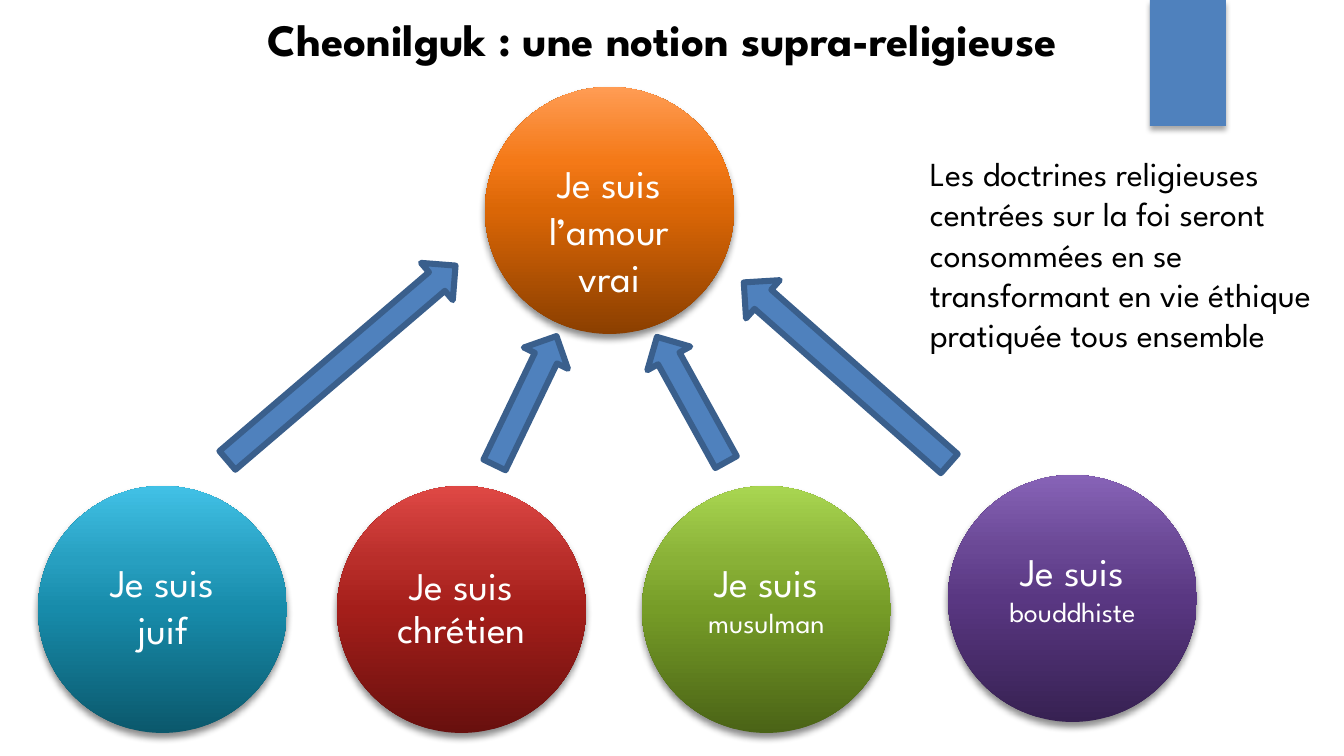
"""Builds a slide on Cheonilguk: four faith circles pointing to a circle of true love."""
import lxml.etree
import pptx
import pptx.dml.color
import pptx.enum.shapes
import pptx.enum.text
import pptx.oxml.ns
import pptx.util

PX = 914400 / 100.8
SHAPES = pptx.enum.shapes.MSO_SHAPE
ALIGN = pptx.enum.text.PP_ALIGN
ANCHOR = pptx.enum.text.MSO_ANCHOR
qn = pptx.oxml.ns.qn

THEME = {
    "font": "League Spartan",
    "black": "000000", "white": "FFFFFF", "blue": "4F81BD", "outline": "3A5F8C",
    "orange": ["8B3F00", "DA6606", "F47917", "FF9C54"],
    "teal": ["0B586C", "178BAA", "279FC0", "41C1E6"],
    "red": ["68100E", "A41E1A", "B92E2A", "DF4845"],
    "green": ["4A6316", "769C27", "89B137", "A9D651"],
    "purple": ["372152", "593782", "6A4895", "8763B7"],
    "stops": [0, 50, 70, 100],
    "title": 32, "label": 28, "body": 24, "small": 20,
}


def write_text(shape, runs, color, frame_format, paragraph_format, bold=False):
    """Fill one paragraph with (text, size) runs and apply the formats."""
    frame = shape.text_frame
    paragraph = frame.paragraphs[0]
    for target, values in ((frame, frame_format), (paragraph, paragraph_format)):
        for name, value in values.items():
            setattr(target, name, value)
    for text, size in runs:
        run = paragraph.add_run()
        run.text = text
        font_format = {"name": THEME["font"], "size": pptx.util.Pt(THEME[size]), "bold": bold}
        for name, value in font_format.items():
            setattr(run.font, name, value)
        run.font.color.rgb = pptx.dml.color.RGBColor.from_string(THEME[color])


def add_shadow(shape, opacity, blur):
    """Give a shape a soft shadow falling straight down."""
    shape.shadow.inherit = False
    effects = shape._element.spPr.find(qn("a:effectLst"))
    shadow = lxml.etree.SubElement(
        effects, qn("a:outerShdw"), blurRad=str(pptx.util.Pt(blur)),
        dist=str(pptx.util.Pt(3)), dir="5400000", rotWithShape="0")
    color = lxml.etree.SubElement(shadow, qn("a:srgbClr"), val=THEME["black"])
    lxml.etree.SubElement(color, qn("a:alpha"), val=str(opacity * 1000))


presentation = pptx.Presentation()
presentation.slide_width = round(1344 * PX)
presentation.slide_height = round(756 * PX)
slide = presentation.slides.add_slide(presentation.slide_layouts[5])

title = slide.shapes.title
title_box = {"left": 0, "top": 0, "width": 1326, "height": 78}
for name, value in title_box.items():
    setattr(title, name, round(value * PX))
write_text(title, [("Cheonilguk : une notion supra-religieuse", "title")], "black",
           {"vertical_anchor": ANCHOR.MIDDLE, "word_wrap": True},
           {"alignment": ALIGN.CENTER}, bold=True)

tab = slide.shapes.add_shape(SHAPES.RECTANGLE, *[round(value * PX) for value in (1150, 0, 76, 126)])
tab.fill.solid()
tab.fill.fore_color.rgb = pptx.dml.color.RGBColor.from_string(THEME["blue"])
tab.line.fill.background()
add_shadow(tab, 35, 4)

arrows = [
    ((317, 213, 49, 300), 229.5),
    ((501, 329, 49, 143), 205.7),
    ((667, 328, 49, 143), 151.1),
    ((821, 236, 51, 274), 131.4),
]
for box, rotation in arrows:
    arrow = slide.shapes.add_shape(SHAPES.DOWN_ARROW, *[round(value * PX) for value in box])
    arrow.rotation = rotation
    arrow.shadow.inherit = False
    arrow.fill.solid()
    arrow.fill.fore_color.rgb = pptx.dml.color.RGBColor.from_string(THEME["blue"])
    arrow.line.color.rgb = pptx.dml.color.RGBColor.from_string(THEME["outline"])
    arrow.line.width = pptx.util.Pt(4.33)

low_text = {"vertical_anchor": ANCHOR.TOP, "margin_top": round(36 * PX), "word_wrap": True}
middle_text = {"vertical_anchor": ANCHOR.MIDDLE, "word_wrap": True}
for side in ("left", "top", "right", "bottom"):
    middle_text[f"margin_{side}"] = round(3 * PX)

circles = [
    (337, 486, "red", [("Je suis chrétien", "label")], middle_text, 0.9),
    (38, 486, "teal", [("Je suis juif", "label")], low_text, 1.0),
    (642, 486, "green", [("Je suis ", "label"), ("musulman", "small")], low_text, 1.0),
    (948, 475, "purple", [("Je suis ", "label"), ("bouddhiste", "small")], low_text, 1.0),
    (485, 87, "orange", [("Je suis l’amour vrai", "label")], low_text, 1.0),
]
for left, top, palette, runs, frame_format, spacing in circles:
    circle = slide.shapes.add_shape(
        SHAPES.OVAL, *[round(value * PX) for value in (left, top, 249, 247)])
    circle.fill.gradient()
    circle.fill.gradient_angle = 90
    stops = circle._element.spPr.find(qn("a:gradFill")).find(qn("a:gsLst"))
    for stop in list(stops):
        stops.remove(stop)
    for position, color in zip(THEME["stops"], THEME[palette]):
        stop = lxml.etree.SubElement(stops, qn("a:gs"), pos=str(position * 1000))
        lxml.etree.SubElement(stop, qn("a:srgbClr"), val=color)
    circle.line.fill.background()
    add_shadow(circle, 45, 5)
    write_text(circle, runs, "white", frame_format,
               {"alignment": ALIGN.CENTER, "line_spacing": spacing})

doctrine = slide.shapes.add_textbox(*[round(value * PX) for value in (920, 148, 419, 254)])
write_text(doctrine, [("Les doctrines religieuses centrées sur la foi seront consommées en se "
                       "transformant en vie éthique pratiquée tous ensemble", "body")], "black",
           {"word_wrap": True, "auto_size": pptx.enum.text.MSO_AUTO_SIZE.SHAPE_TO_FIT_TEXT},
           {"alignment": ALIGN.LEFT})

presentation.save("out.pptx")
